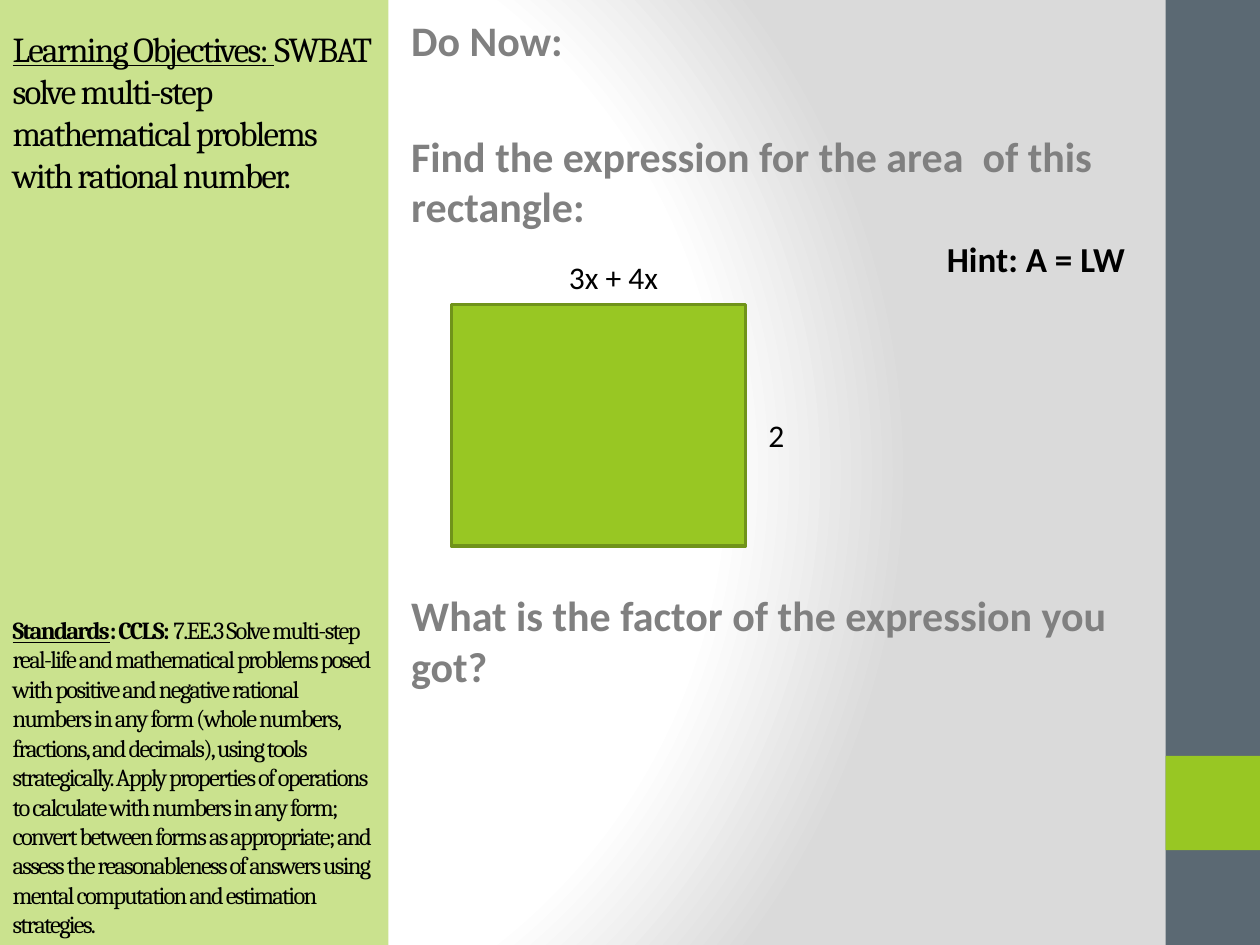
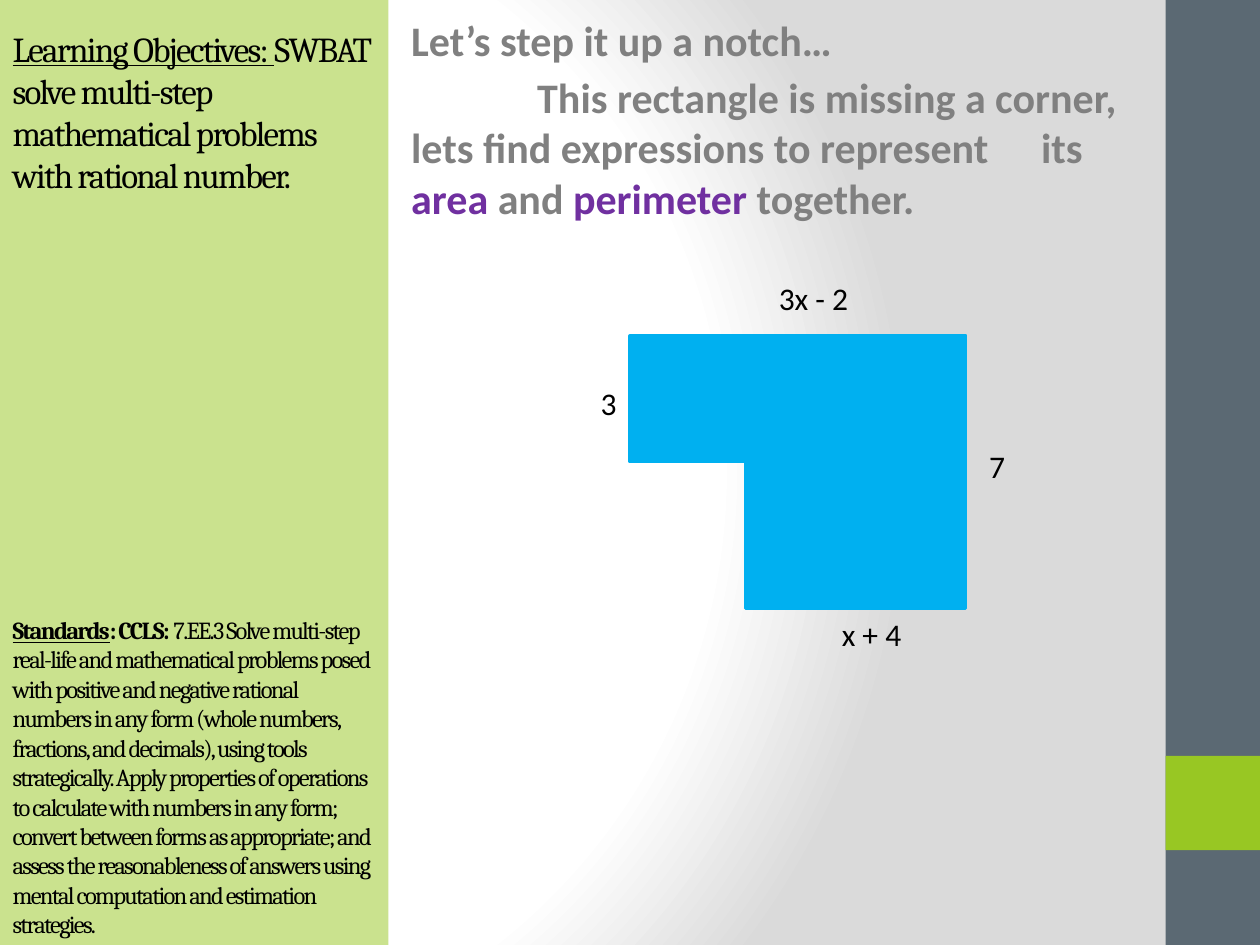
from pptx import Presentation
from pptx.dml.color import RGBColor as Rgb
from pptx.enum.shapes import MSO_SHAPE as Shape
from pptx.enum.text import MSO_ANCHOR as Anchor, MSO_AUTO_SIZE as Fit, PP_ALIGN as Align
from pptx.oxml import parse_xml
from pptx.oxml.ns import nsdecls, qn
from pptx.util import Cm, Pt

HUES = {
    "green": "98C723", "moss": "70931A", "slate": "5B6973", "sky": "00B0F0",
    "plum": "7030A0", "gray": "808080", "black": "000000",
    "white": "FFFFFF", "mist": "DADADA",
}
TITLE_ONLY = 5
WIDE, HIGH = 25.4, 19.05
BAND = 1.9

GOAL = [
    ("Learning Objectives: ", {"line": True}),
    ("SWBAT solve multi-step mathematical problems with rational number.", {}),
]
NORM = [
    ("Standards", {"bold": True, "line": True}),
    (": CCLS:", {"bold": True}),
    (" 7.EE.3 Solve multi-step real-life and mathematical problems posed with "
     "positive and negative rational numbers in any form (whole numbers, "
     "fractions, and decimals), using tools strategically. Apply properties of "
     "operations to calculate with numbers in any form; convert between forms "
     "as appropriate; and assess the reasonableness of answers using mental "
     "computation and estimation strategies.", {}),
]


class Deck:
    """Holds the lesson's style and the slide being built."""

    def __init__(self):
        self.prs = Presentation()
        self.prs.slide_width, self.prs.slide_height = Cm(WIDE), Cm(HIGH)
        self.slide = None
        self.glow()

    def glow(self):
        """Give the master its off-centre radial gradient."""
        master = self.prs.slide_master
        master.background.fill.gradient()
        old = next(master.element.iter(qn("a:gradFill")))
        stops = "".join(
            f'<a:gs pos="{pos}000"><a:srgbClr val="{HUES[hue]}"/></a:gs>'
            for pos, hue in ((0, "white"), (75, "white"), (100, "mist")))
        old.getparent().replace(old, parse_xml(
            f'<a:gradFill rotWithShape="1" {nsdecls("a")}><a:gsLst>{stops}</a:gsLst>'
            '<a:path path="circle"><a:fillToRect l="20000" t="50000" '
            'r="100000" b="50000"/></a:path></a:gradFill>'))

    def page(self):
        """Start a slide with the side bands and the objectives panel."""
        layout = self.prs.slide_layouts[TITLE_ONLY]
        self.slide = self.prs.slides.add_slide(layout)
        self.box(WIDE - BAND, 0, BAND, HIGH, "slate")
        self.box(WIDE - BAND, 15.24, BAND, BAND, "green")
        self.panel()

    def panel(self):
        title = self.slide.shapes.title
        title.left, title.top = Cm(0), Cm(0)
        title.width, title.height = Cm(7.83), Cm(HIGH)
        title.fill.solid()
        title.fill.fore_color.rgb = Rgb.from_string(HUES["green"])
        tint = next(title.element.iter(qn("a:srgbClr")))
        tint.append(parse_xml(f'<a:alpha val="51000" {nsdecls("a")}/>'))
        frame = title.text_frame
        frame.word_wrap, frame.auto_size = True, Fit.NONE
        frame.vertical_anchor = Anchor.BOTTOM
        style = {"font": "Cambria", "track": -100}
        self.put(frame.paragraphs[0], GOAL, size=20, **style)
        self.put(frame.add_paragraph(), NORM, size=14, gap=240, **style)

    def box(self, left, top, width, height, hue, edge=None):
        shape = self.slide.shapes.add_shape(
            Shape.RECTANGLE, Cm(left), Cm(top), Cm(width), Cm(height))
        shape.shadow.inherit = False
        shape.fill.solid()
        shape.fill.fore_color.rgb = Rgb.from_string(HUES[hue])
        if edge:
            shape.line.color.rgb = Rgb.from_string(HUES[edge])
            shape.line.width = Pt(2)
        else:
            shape.line.fill.background()

    def put(self, par, parts, size, gap=0, font="Calibri", track=0, **base):
        """Fill a paragraph with (text, style) parts laid over a base style."""
        par.alignment = Align.LEFT
        par.space_before = Pt(gap)
        for text, own in parts:
            look = {"hue": "black", **base, **own}
            run = par.add_run()
            run.text = text
            run.font.name, run.font.size = font, Pt(size)
            run.font.bold = look.get("bold", False)
            run.font.underline = look.get("line", False)
            run.font.color.rgb = Rgb.from_string(HUES[look["hue"]])
            if track:
                run._r.get_or_add_rPr().set("spc", str(track))

    def text(self, left, top, width, height):
        area = self.slide.shapes.add_textbox(
            Cm(left), Cm(top), Cm(width), Cm(height))
        area.text_frame.word_wrap = True
        return area.text_frame

    def label(self, words, left, top, width, size=18, bold=False):
        frame = self.text(left, top, width, 1.02)
        self.put(frame.paragraphs[0], [(words, {})], size, bold=bold)

    def body(self, *items):
        """Set the task; each item is (gap above, first indent, parts)."""
        frame = self.text(8.04, 0.16, 15.66, 19)
        for num, (gap, dent, parts) in enumerate(items):
            par = frame.add_paragraph() if num else frame.paragraphs[0]
            self.put(par, parts, 24, gap, bold=True, hue="gray")
            if dent:
                par._p.get_or_add_pPr().set("indent", str(Cm(dent)))


def area_task(deck):
    deck.page()
    deck.body(
        (0, 0, [("Do Now:", {})]),
        (37.5, 0, [("Find the expression for the area  of this rectangle:", {})]),
        (205, 0, [("What is the factor of the expression you got?", {})]))
    deck.box(9.1, 6.14, 5.93, 4.87, "green", "moss")
    deck.label("3x + 4x", 11.22, 5.08, 4.23)
    deck.label("2", 15.24, 8.26, 1.48)
    deck.label("Hint: A = LW", 18.84, 4.66, 4.66, size=20, bold=True)


def corner_task(deck):
    deck.page()
    plum = {"hue": "plum"}
    deck.body(
        (0, 0, [("Let’s step it up a notch…", {})]),
        (4, 2.54, [
            ("This rectangle is missing a corner, lets find expressions "
             "to represent \tits ", {}),
            ("area", plum), (" and ", {}), ("perimeter", plum),
            (" together.", {})]))
    left, top, width, arm = 12.7, 6.77, 6.77, 2.54
    foot = 4.44
    deck.box(left, top, width, arm, "sky", "sky")
    deck.box(left + width - foot, top + arm, foot, 2.96, "sky", "sky")
    deck.label("3x - 2", 15.45, 5.5, 2.12)
    deck.label("7", 19.69, 8.89, 2.96)
    deck.label("x + 4", 16.72, 12.28, 2.75)
    deck.label("3", 11.86, 7.62, 0.64)


def main():
    deck = Deck()
    area_task(deck)
    corner_task(deck)
    deck.prs.save("out.pptx")


if __name__ == "__main__":
    main()
